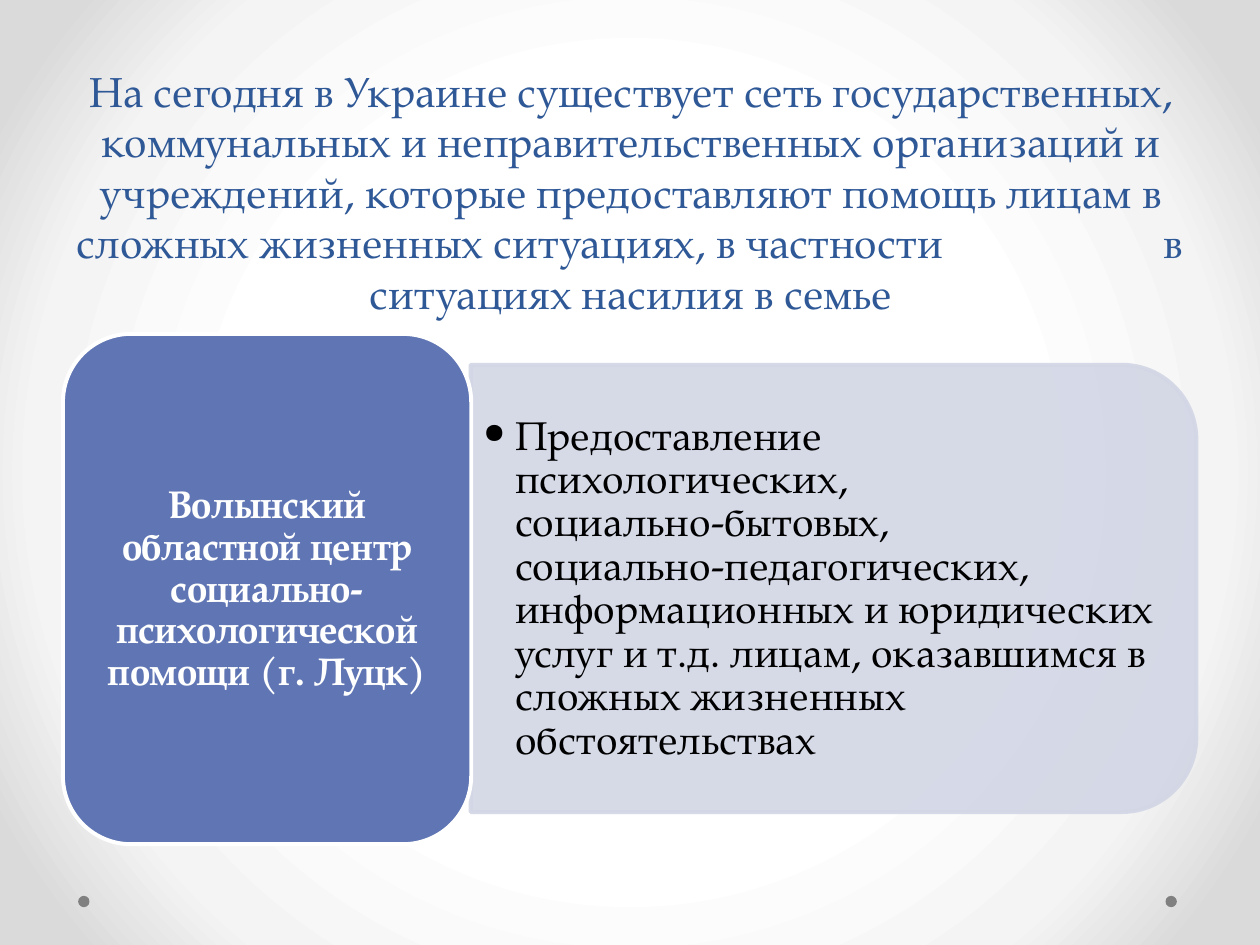
from pptx import Presentation
from pptx.dml.color import RGBColor
from pptx.enum.shapes import MSO_SHAPE
from pptx.enum.text import MSO_ANCHOR, PP_ALIGN
from pptx.oxml import parse_xml
from pptx.oxml.ns import nsdecls
from pptx.util import Inches, Pt
from lxml.etree import SubElement
from pptx.oxml.ns import qn

BLUE = RGBColor(0x2F, 0x58, 0x97)
INDIGO = RGBColor(0x60, 0x76, 0xB4)
PALE = RGBColor(0xD2, 0xD6, 0xE5)
GRAY = RGBColor(0x80, 0x80, 0x80)
WHITE = RGBColor(0xFF, 0xFF, 0xFF)
BLACK = RGBColor(0, 0, 0)
FONT = "TeX Gyre Pagella"

TITLE = [
    ("На сегодня в Украине существует сеть государственных, коммунальных и "
     "неправительственных организаций и учреждений, которые предоставляют "
     "помощь лицам в", PP_ALIGN.CENTER),
    ("сложных жизненных ситуациях, в частности\tв", PP_ALIGN.LEFT),
    ("ситуациях насилия в семье", PP_ALIGN.CENTER),
]
CENTER = [("Волынский областной центр социально-психологической помощи "
           "(г. Луцк)", PP_ALIGN.CENTER)]
HELP = [("Предоставление психологических,\vсоциально-бытовых,\v"
         "социально-педагогических, информационных и юридических услуг и т.д. "
         "лицам, оказавшимся в сложных жизненных обстоятельствах", PP_ALIGN.LEFT)]
STOPS = [(50, "FFFFFF"), (76, "F4F4F4"), (92, "DADADA")]
DOTS = [0.62, 9.25]


def paint(slide):
    stops = "".join(f'<a:gs pos="{pos * 1000}"><a:srgbClr val="{tone}"/></a:gs>'
                    for pos, tone in STOPS)
    slide.element.cSld.insert(0, parse_xml(
        f'<p:bg {nsdecls("p", "a")}><p:bgPr><a:gradFill rotWithShape="1">'
        f'<a:gsLst>{stops}</a:gsLst><a:path path="circle">'
        '<a:fillToRect l="50000" t="50000" r="50000" b="50000"/></a:path>'
        '</a:gradFill><a:effectLst/></p:bgPr></p:bg>'))


def add_form(slide, kind, box, fill, line=None, turn=0, alpha=None):
    form = slide.shapes.add_shape(kind, *map(Inches, box))
    form.shadow.inherit = False
    form.rotation = turn
    form.fill.solid()
    form.fill.fore_color.rgb = fill
    if line is None:
        form.line.fill.background()
    else:
        form.line.color.rgb = line
        form.line.width = Pt(2.25)
    if alpha:
        for tone in form._element.spPr.iter(qn("a:srgbClr")):
            SubElement(tone, qn("a:alpha"), val=str(alpha * 1000))
    return form


def add_text(slide, box, lines, anchor, style, side=0.1, space=None):
    frame = slide.shapes.add_textbox(*map(Inches, box)).text_frame
    frame.word_wrap = True
    frame.vertical_anchor = anchor
    frame.margin_left = frame.margin_right = Inches(side)
    for row, (text, align) in enumerate(lines):
        para = frame.add_paragraph() if row else frame.paragraphs[0]
        para.text = text
        para.alignment = align
        para.line_spacing = space
        if "\t" in text:
            tabs = SubElement(para._p.get_or_add_pPr(), qn("a:tabLst"))
            SubElement(tabs, qn("a:tab"), pos=str(Inches(8.78)), algn="r")
        for run in para.runs:
            for name, value in style.items():
                if name == "color":
                    run.font.color.rgb = value
                else:
                    setattr(run.font, name, value)
    return frame


def add_mark(para):
    props = para._p.get_or_add_pPr()
    props.set("marL", str(Inches(0.25)))
    props.set("indent", str(-Inches(0.25)))
    SubElement(props, qn("a:buFont"), typeface=FONT)
    SubElement(props, qn("a:buChar"), char="•")


def main():
    deck = Presentation()
    deck.slide_width, deck.slide_height = Inches(10), Inches(7.5)
    slide = deck.slides.add_slide(deck.slide_layouts[6])
    paint(slide)
    for left in DOTS:
        add_form(slide, MSO_SHAPE.OVAL, (left, 7.11, 0.09, 0.09), GRAY)

    add_text(slide, (0.51, 0.13, 9, 2.44), TITLE, MSO_ANCHOR.BOTTOM,
             {"name": FONT, "size": Pt(24), "color": BLUE})

    add_form(slide, MSO_SHAPE.ROUND_2_SAME_RECTANGLE, (4.84, 1.79, 3.55, 5.76),
             PALE, PALE, 90, 90)
    frame = add_text(slide, (3.74, 3.07, 5.59, 3.21), HELP, MSO_ANCHOR.MIDDLE,
                     {"name": FONT, "size": Pt(23), "color": BLACK}, space=0.9)
    add_mark(frame.paragraphs[0])

    add_form(slide, MSO_SHAPE.ROUNDED_RECTANGLE, (0.5, 2.65, 3.24, 4.05),
             INDIGO, WHITE)
    add_text(slide, (0.66, 2.81, 2.92, 3.74), CENTER, MSO_ANCHOR.MIDDLE,
             {"name": FONT, "size": Pt(22), "color": WHITE, "bold": True},
             side=0.09, space=0.9)
    deck.save("out.pptx")


if __name__ == "__main__":
    main()
